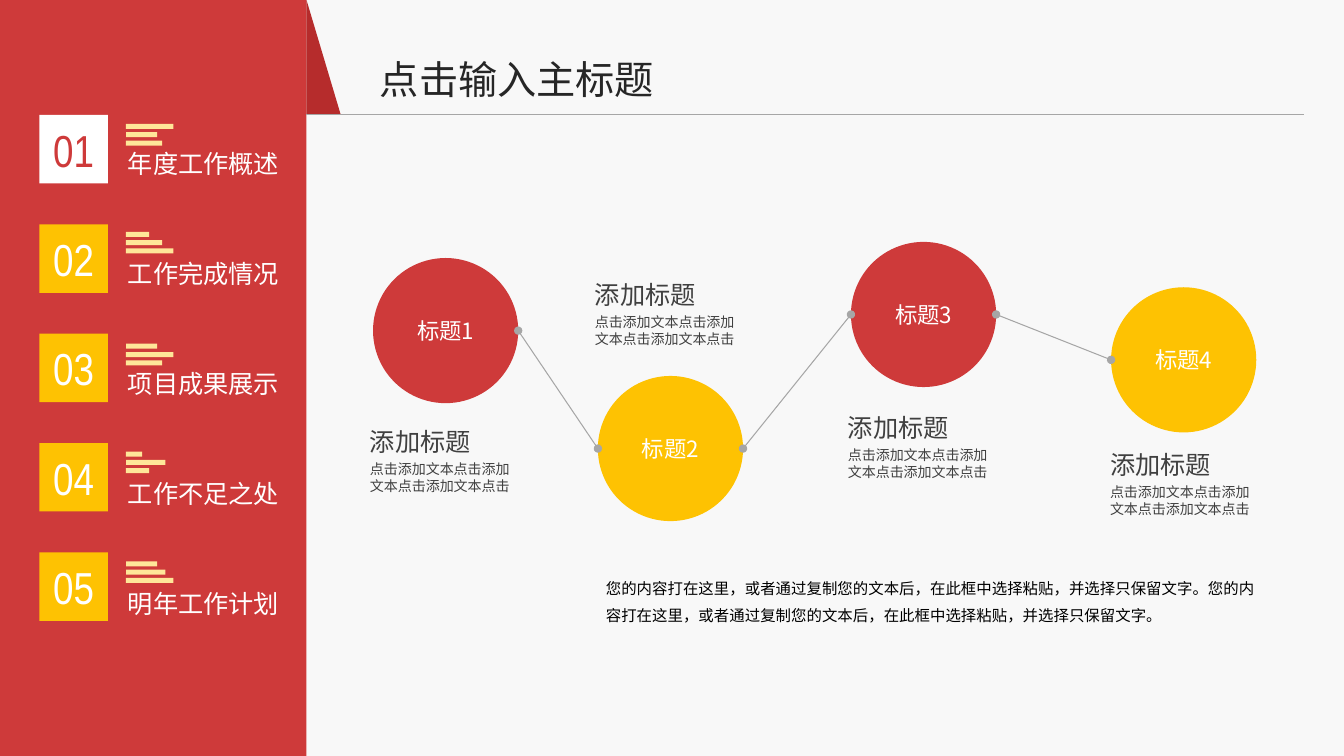
from dataclasses import dataclass

import pptx
import pptx.dml.color
import pptx.enum.shapes
import pptx.enum.text
import pptx.oxml
import pptx.oxml.ns
import pptx.util

Inches = pptx.util.Inches
Pt = pptx.util.Pt
SHAPE = pptx.enum.shapes.MSO_SHAPE
ANCHOR = pptx.enum.text.MSO_ANCHOR
ALIGN = pptx.enum.text.PP_ALIGN


@dataclass(frozen=True)
class Theme:
    cjk: str = "Noto Sans CJK SC"
    digits: str = "Arial Narrow"
    paper: str = "F8F8F8"
    white: str = "FFFFFF"
    red: str = "CE3A3A"
    dark_red: str = "B62C2C"
    yellow: str = "FEC202"
    cream: str = "FFE699"
    grey: str = "A6A6A6"
    ink: str = "262626"
    text: str = "404040"
    black: str = "000000"
    number_size: int = 32
    title_size: int = 28
    heading_size: int = 18
    circle_size: int = 16
    note_size: int = 11
    body_size: int = 10


THEME = Theme()
TIGHT = (0.08, 0.04)
LOOSE = (0.1, 0.05)

MENU = [
    ("年度工作概述", 1.23, (0.47, 0.31, 0.36)),
    ("工作完成情况", 2.30, (0.23, 0.36, 0.47)),
    ("项目成果展示", 3.41, (0.31, 0.47, 0.36)),
    ("工作不足之处", 4.48, (0.16, 0.39, 0.23)),
    ("明年工作计划", 5.57, (0.31, 0.39, 0.47)),
]
DIAMETER = 1.44
STEPS = [
    ("标题1", (3.70, 2.56), THEME.red, (3.59, 4.09)),
    ("标题2", (5.93, 3.73), THEME.yellow, (5.82, 2.63)),
    ("标题3", (8.44, 2.40), THEME.red, (8.33, 3.95)),
    ("标题4", (11.02, 2.85), THEME.yellow, (10.93, 4.32)),
]
STEP_HEADING = "添加标题"
STEP_BODY = "点击添加文本点击添加文本点击添加文本点击"
NOTE = "您的内容打在这里，或者通过复制您的文本后，在此框中选择粘贴，并选择只保留文字。" * 2


def rgb(color):
    return pptx.dml.color.RGBColor.from_string(color)


def set_insets(tf, insets):
    tf.margin_left = tf.margin_right = Inches(insets[0])
    tf.margin_top = tf.margin_bottom = Inches(insets[1])


def add_run(p, text, size, color, font):
    r = p.add_run()
    r.text = text
    r.font.size = Pt(size)
    r.font.name = font
    r.font.color.rgb = rgb(color)
    ea = pptx.oxml.parse_xml(f'<a:ea {pptx.oxml.ns.nsdecls("a")} typeface="{font}"/>')
    r.font._element.find(pptx.oxml.ns.qn("a:latin")).addnext(ea)


def add_block(s, kind, left, top, width, height, fill):
    sp = s.shapes.add_shape(kind, Inches(left), Inches(top), Inches(width), Inches(height))
    sp.shadow.inherit = False
    sp.fill.solid()
    sp.fill.fore_color.rgb = rgb(fill)
    sp.line.fill.background()
    return sp


def add_caption(sp, text, size, color, font, insets):
    tf = sp.text_frame
    tf.vertical_anchor = ANCHOR.MIDDLE
    set_insets(tf, insets)
    p = tf.paragraphs[0]
    p.alignment = ALIGN.CENTER
    add_run(p, text, size, color, font)


def add_text(s, text, left, top, width, height, size, color,
             insets=TIGHT, wrap=True, anchor=ANCHOR.TOP, spacing=None):
    sp = s.shapes.add_textbox(Inches(left), Inches(top), Inches(width), Inches(height))
    tf = sp.text_frame
    tf.word_wrap = wrap
    tf.auto_size = pptx.enum.text.MSO_AUTO_SIZE.SHAPE_TO_FIT_TEXT
    tf.vertical_anchor = anchor
    set_insets(tf, insets)
    p = tf.paragraphs[0]
    if spacing:
        p.line_spacing = spacing
    add_run(p, text, size, color, THEME.cjk)


def add_line(s, start, end, dots=False):
    x1, y1, x2, y2 = (Inches(v) for v in (*start, *end))
    cxn = s.shapes.add_connector(pptx.enum.shapes.MSO_CONNECTOR.STRAIGHT, x1, y1, x2, y2)
    cxn.line.color.rgb = rgb(THEME.grey)
    cxn.line.width = Pt(0.75)
    ns = pptx.oxml.ns.nsdecls("a")
    if dots:
        ln = cxn.line._get_or_add_ln()
        for tag in ("headEnd", "tailEnd"):
            ln.append(pptx.oxml.parse_xml(f'<a:{tag} {ns} type="oval"/>'))
    cxn._element.spPr.append(pptx.oxml.parse_xml(f"<a:effectLst {ns}/>"))


def add_menu_item(s, index, label, bars_top, bar_widths):
    add_text(s, label, 1.17, 1.42 + 1.0925 * index, 1.72, 0.4,
             THEME.heading_size, THEME.white, LOOSE, wrap=False)
    for row, width in enumerate(bar_widths):
        add_block(s, SHAPE.RECTANGLE, 1.25, bars_top + 0.082 * row, width, 0.05, THEME.cream)
    fill, color = (THEME.yellow, THEME.white) if index else (THEME.white, THEME.red)
    sp = add_block(s, SHAPE.RECTANGLE, 0.39, 1.14 + 1.085 * index, 0.68, 0.68, fill)
    add_caption(sp, f"{index + 1:02d}", THEME.number_size, color, THEME.digits, LOOSE)


def add_step(s, label, circle_at, fill, text_at):
    sp = add_block(s, SHAPE.OVAL, *circle_at, DIAMETER, DIAMETER, fill)
    add_caption(sp, label, THEME.circle_size, THEME.white, THEME.cjk, TIGHT)
    left, top = text_at
    add_text(s, STEP_HEADING, left, top, 1.43, 0.43, THEME.heading_size, THEME.text,
             anchor=ANCHOR.MIDDLE, spacing=1.5)
    add_text(s, STEP_BODY, left, top + 0.44, 1.64, 0.42, THEME.body_size, THEME.text)


def add_step_links(s):
    radius = DIAMETER / 2
    spots = [step[1] for step in STEPS]
    for (x1, y1), (x2, y2) in zip(spots, spots[1:]):
        add_line(s, (x1 + DIAMETER, y1 + radius), (x2, y2 + radius), dots=True)


def main():
    prs = pptx.Presentation()
    prs.slide_width, prs.slide_height = Inches(13.33), Inches(7.5)
    s = prs.slides.add_slide(prs.slide_layouts[6])

    add_block(s, SHAPE.RECTANGLE, 1.72, 0, 11.61, 7.5, THEME.paper)
    add_block(s, SHAPE.RECTANGLE, 0, 0, 3.04, 7.5, THEME.red)
    add_block(s, SHAPE.RIGHT_TRIANGLE, 3.04, 0, 0.34, 1.14, THEME.dark_red)
    for index, item in enumerate(MENU):
        add_menu_item(s, index, *item)

    add_line(s, (3.04, 1.14), (12.93, 1.14))
    add_text(s, "点击输入主标题", 3.67, 0.5, 2.95, 0.57, THEME.title_size, THEME.ink,
             LOOSE, wrap=False)
    for step in STEPS:
        add_step(s, *step)
    add_step_links(s)
    add_text(s, NOTE, 5.93, 5.61, 6.64, 0.64, THEME.note_size, THEME.black, spacing=1.5)

    prs.save("out.pptx")


if __name__ == "__main__":
    main()
